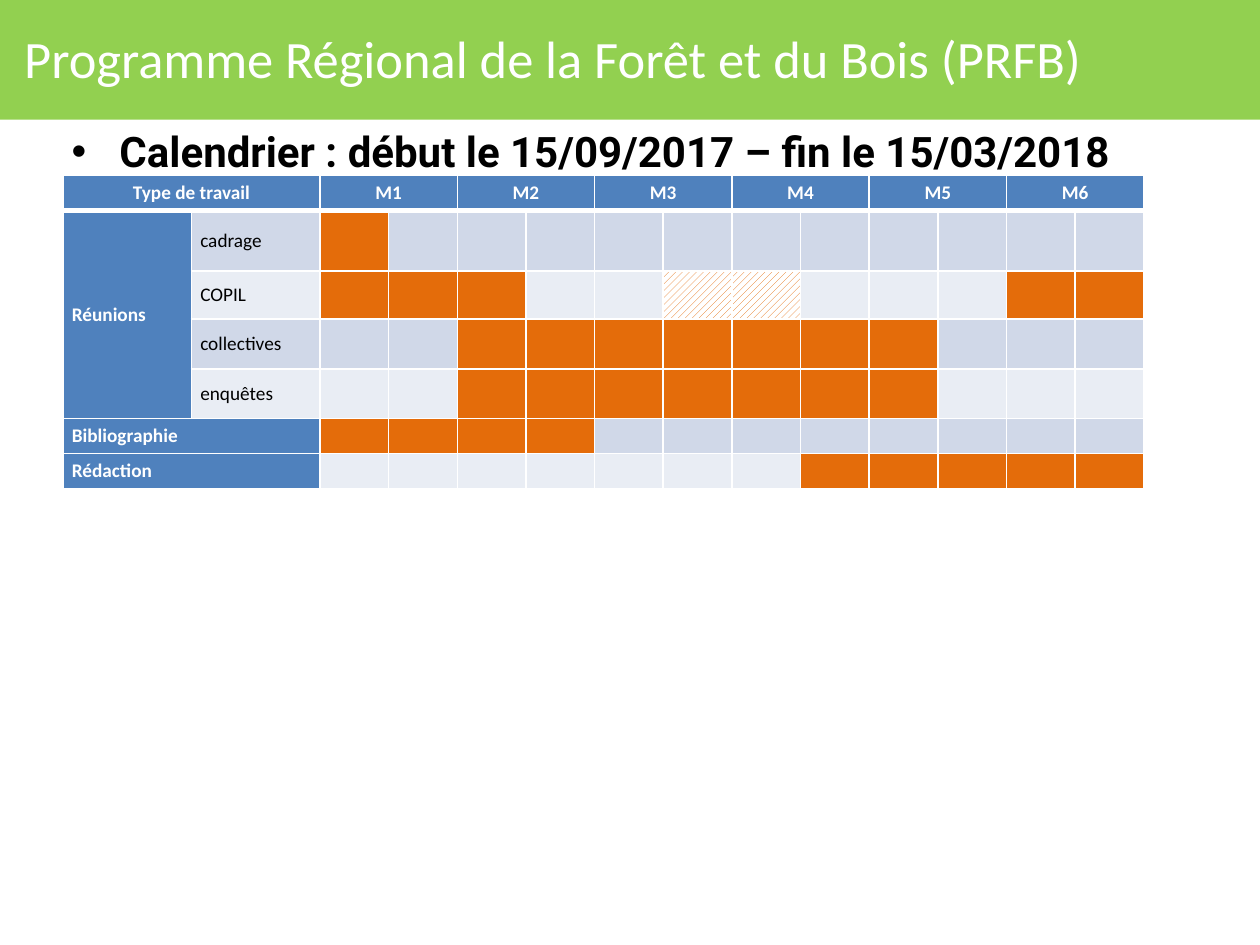
from lxml.etree import SubElement
from pptx import Presentation
from pptx.dml.color import RGBColor
from pptx.enum.dml import MSO_PATTERN as Pattern
from pptx.enum.shapes import MSO_SHAPE as Shape
from pptx.enum.text import MSO_ANCHOR as Anchor, PP_ALIGN as Align
from pptx.oxml.ns import qn
from pptx.util import Inches, Pt

WHITE, BLACK, GREEN = "FFFFFF", "000000", "92D050"
HEADER, ACTIVE = "4F81BD", "E46C0A"
BANDS = ("D0D8E8", "E9EDF4")

MONTHS = 6
LABEL_COLUMNS = 2
HALF_MONTHS = 2 * MONTHS
LABEL_WIDTH, HALF_MONTH_WIDTH = 1.02, 0.545
ROW_HEIGHTS = (0.28, 0.48, 0.38, 0.4, 0.39, 0.28, 0.28)

# Label, busy half-months, half-months still to be confirmed
MEETINGS = [
    ("cadrage", {0}, set()),
    ("COPIL", {0, 1, 2, 10, 11}, {5, 6}),
    ("collectives", set(range(2, 9)), set()),
    ("enquêtes", set(range(2, 9)), set()),
]
DESK_WORK = [
    ("Bibliographie", set(range(4)), set()),
    ("Rédaction", set(range(7, 12)), set()),
]


def rgb(value):
    return RGBColor.from_string(value)


def paint(fill, color):
    fill.solid()
    fill.fore_color.rgb = rgb(color)


def write(frame, text, size, color, font="Calibri", bold=False, align=Align.LEFT):
    paragraph = frame.paragraphs[0]
    paragraph.text = text
    paragraph.alignment = align
    paragraph.font.size = Pt(size)
    paragraph.font.name = font
    paragraph.font.bold = bold
    paragraph.font.color.rgb = rgb(color)
    return paragraph


def add_banner(slide, width, text):
    banner = slide.shapes.add_shape(
        Shape.RECTANGLE, 0, Inches(-0.03), width, Inches(0.98))
    banner.shadow.inherit = False
    paint(banner.fill, GREEN)
    banner.line.fill.background()
    banner.text_frame.vertical_anchor = Anchor.MIDDLE
    write(banner.text_frame, text, 30, WHITE)


def add_bullet(slide, text):
    box = slide.shapes.add_textbox(
        Inches(0.47), Inches(0.95), Inches(9.33), Inches(6.25))
    box.text_frame.word_wrap = True
    paragraph = write(box.text_frame, text, 24, BLACK, "Roboto", True)
    properties = paragraph._p.get_or_add_pPr()
    properties.set("marL", str(Inches(0.38)))
    properties.set("indent", str(Inches(-0.38)))
    bullet_font = SubElement(properties, qn("a:buFont"), typeface="Arial")
    bullet = SubElement(properties, qn("a:buChar"), char="•")
    properties.insert(0, bullet_font)
    properties.insert(1, bullet)


def set_borders(cell, bottom=1):
    """Draw white cell edges; they must precede the fill in the XML."""
    properties = cell._tc.get_or_add_tcPr()
    edges = {"lnL": 1, "lnR": 1, "lnT": 1, "lnB": bottom}
    for position, (edge, points) in enumerate(edges.items()):
        line = SubElement(properties, qn(f"a:{edge}"), w=str(Pt(points)))
        solid = SubElement(line, qn("a:solidFill"))
        SubElement(solid, qn("a:srgbClr"), val=WHITE)
        properties.insert(position, line)


def style_cell(cell, fill, text="", color=WHITE, bold=True, align=Align.JUSTIFY):
    cell.margin_left = cell.margin_right = Inches(0.07)
    cell.margin_top = cell.margin_bottom = 0
    cell.vertical_anchor = Anchor.MIDDLE
    paint(cell.fill, fill)
    write(cell.text_frame, text, 11, color, bold=bold, align=align)


def hatch(cell):
    cell.fill.patterned()
    cell.fill.pattern = Pattern.WIDE_UPWARD_DIAGONAL
    cell.fill.fore_color.rgb = rgb(ACTIVE)
    cell.fill.back_color.rgb = rgb(WHITE)


def fill_header(table):
    titles = ["Type de travail"] + [f"M{month + 1}" for month in range(MONTHS)]
    for index, title in enumerate(titles):
        first, second = (table.cell(0, 2 * index + half) for half in (0, 1))
        first.merge(second)
        style_cell(first, HEADER, title, align=Align.CENTER)
        style_cell(second, HEADER)


def fill_periods(table, row, busy, tentative):
    for period in range(HALF_MONTHS):
        cell = table.cell(row, LABEL_COLUMNS + period)
        style_cell(cell, ACTIVE if period in busy else BANDS[(row - 1) % 2])
        if period in tentative:
            hatch(cell)


def add_calendar(slide):
    columns = LABEL_COLUMNS + HALF_MONTHS
    widths = [LABEL_WIDTH] * LABEL_COLUMNS + [HALF_MONTH_WIDTH] * HALF_MONTHS
    table = slide.shapes.add_table(
        len(ROW_HEIGHTS), columns, Inches(0.5), Inches(1.39),
        Inches(sum(widths)), Inches(sum(ROW_HEIGHTS))).table
    for column, width in zip(table.columns, widths):
        column.width = Inches(width)
    for row, height in zip(table.rows, ROW_HEIGHTS):
        row.height = Inches(height)

    fill_header(table)
    for row, (label, busy, tentative) in enumerate(MEETINGS + DESK_WORK, start=1):
        fill_periods(table, row, busy, tentative)
        if row <= len(MEETINGS):
            style_cell(table.cell(row, 0), HEADER, "Réunions" if row == 1 else "")
            style_cell(table.cell(row, 1), BANDS[(row - 1) % 2], label, BLACK, False)
        else:
            style_cell(table.cell(row, 0), HEADER, label)
            style_cell(table.cell(row, 1), HEADER)
            table.cell(row, 0).merge(table.cell(row, 1))
    table.cell(1, 0).merge(table.cell(len(MEETINGS), 0))

    for row in range(len(ROW_HEIGHTS)):
        for column in range(columns):
            set_borders(table.cell(row, column), bottom=3 if row == 0 else 1)


def main():
    deck = Presentation()
    deck.slide_width, deck.slide_height = Inches(10), Inches(7.5)
    slide = deck.slides.add_slide(deck.slide_layouts[6])
    add_banner(slide, deck.slide_width,
               " Programme Régional de la Forêt et du Bois (PRFB)")
    add_bullet(slide, "Calendrier : début le 15/09/2017 – fin le 15/03/2018")
    add_calendar(slide)
    deck.save("out.pptx")


if __name__ == "__main__":
    main()
